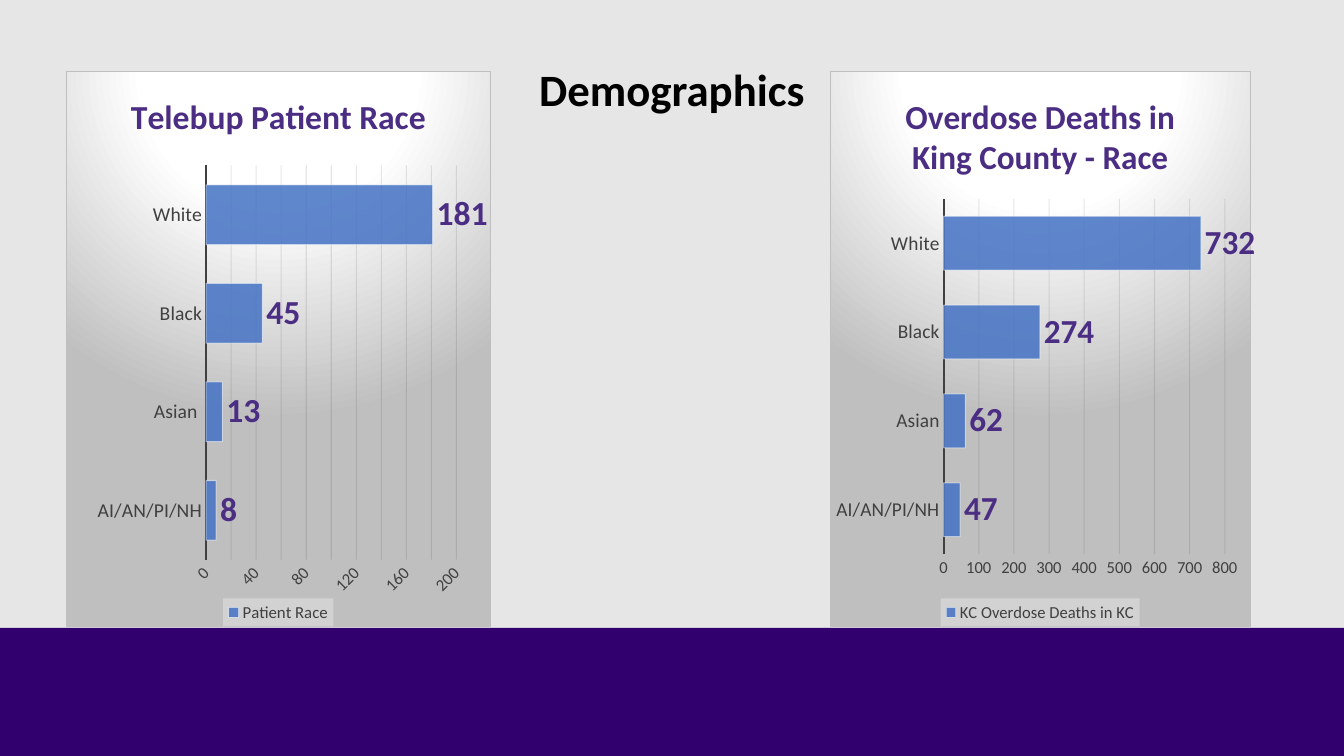
from dataclasses import dataclass

from lxml import etree
from pptx import Presentation
from pptx.chart.data import CategoryChartData
from pptx.dml.color import RGBColor
from pptx.enum.chart import XL_CHART_TYPE, XL_LABEL_POSITION, XL_LEGEND_POSITION, XL_TICK_MARK
from pptx.enum.shapes import MSO_SHAPE
from pptx.enum.text import MSO_ANCHOR, PP_ALIGN
from pptx.oxml import parse_xml
from pptx.oxml.ns import nsdecls, qn
from pptx.util import Inches, Pt

BAR_CLUSTERED = XL_CHART_TYPE.BAR_CLUSTERED
OUTSIDE_END = XL_LABEL_POSITION.OUTSIDE_END
LEGEND_BOTTOM = XL_LEGEND_POSITION.BOTTOM
NO_TICK = XL_TICK_MARK.NONE
RECTANGLE = MSO_SHAPE.RECTANGLE
MIDDLE = MSO_ANCHOR.MIDDLE
CENTER = PP_ALIGN.CENTER


@dataclass(frozen=True)
class Theme:
    font: str = "Calibri"
    background: str = "E7E6E6"
    band: str = "32006E"
    heading: str = "000000"
    accent: str = "4B2E83"
    bar: str = "4472C4"
    axis: str = "404040"
    grid: str = "0D0D0D"
    white: str = "FFFFFF"
    panel_edge: str = "BFBFBF"
    legend: str = "F2F2F2"
    heading_size: int = 32
    chart_size: int = 24
    category_size: int = 14
    small_size: int = 12


THEME = Theme()


def rgb(color):
    return RGBColor.from_string(color)


def style_font(font, size, color, bold=False):
    font.name = THEME.font
    font.size = Pt(size)
    font.bold = bold
    font.color.rgb = rgb(color)


def set_line(line, color, width):
    line.color.rgb = rgb(color)
    line.width = Pt(width)


def set_alpha(properties, percent):
    """Make the first colour found in the given element translucent."""
    color = next(properties.iter(qn("a:srgbClr")))
    etree.SubElement(color, qn("a:alpha")).set("val", str(percent * 1000))


def paint_panel(chart):
    """Give the chart area its spotlight gradient and thin border."""
    stops = ((0, THEME.white), (39, THEME.white), (100, THEME.panel_edge))
    stop_xml = "".join(
        f'<a:gs pos="{position * 1000}"><a:srgbClr val="{color}"/></a:gs>'
        for position, color in stops)
    panel = parse_xml(
        f'<c:spPr {nsdecls("c", "a")}><a:gradFill><a:gsLst>{stop_xml}</a:gsLst>'
        '<a:path path="circle">'
        '<a:fillToRect l="50000" t="-80000" r="50000" b="180000"/></a:path></a:gradFill>'
        f'<a:ln w="{Pt(0.75)}"><a:solidFill><a:srgbClr val="{THEME.panel_edge}"/>'
        '</a:solidFill></a:ln></c:spPr>')
    chart.element.find(qn("c:chart")).addnext(panel)


def place_plot(chart, x, y, w, h):
    """Fix the inner plot area, in fractions of the chart."""
    plot_area = chart.element.find(qn("c:chart")).find(qn("c:plotArea"))
    for automatic in plot_area.findall(qn("c:layout")):
        plot_area.remove(automatic)
    plot_area.insert(0, parse_xml(
        f'<c:layout {nsdecls("c")}><c:manualLayout><c:layoutTarget val="inner"/>'
        '<c:xMode val="edge"/><c:yMode val="edge"/>'
        f'<c:x val="{x}"/><c:y val="{y}"/><c:w val="{w}"/><c:h val="{h}"/>'
        '</c:manualLayout></c:layout>'))


def style_axes(chart):
    categories, values = chart.category_axis, chart.value_axis
    for axis, size in ((categories, THEME.category_size), (values, THEME.small_size)):
        axis.major_tick_mark = axis.minor_tick_mark = NO_TICK
        style_font(axis.tick_labels.font, size, THEME.axis)
    set_line(categories.format.line, THEME.axis, 1.5)
    values.format.line.fill.background()
    values.has_major_gridlines = True
    grid = values.major_gridlines.format.line
    set_line(grid, THEME.grid, 0.75)
    set_alpha(values.major_gridlines._xAx.find(qn("c:majorGridlines")), 10)


def style_bars(chart):
    plot = chart.plots[0]
    plot.gap_width = 65
    plot.vary_by_categories = False
    bars = plot.series[0]
    bars.format.fill.solid()
    bars.format.fill.fore_color.rgb = rgb(THEME.bar)
    properties = bars._element.find(qn("c:spPr"))
    set_alpha(properties, 85)
    set_line(bars.format.line, THEME.white, 0.75)
    set_alpha(properties.find(qn("a:ln")), 50)
    labels = bars.data_labels
    labels.show_value = True
    labels.position = OUTSIDE_END
    style_font(labels.font, THEME.chart_size, THEME.accent, bold=True)


def style_legend(chart):
    chart.has_legend = True
    legend = chart.legend
    legend.position = LEGEND_BOTTOM
    legend.include_in_layout = False
    style_font(legend.font, THEME.small_size, THEME.axis)
    backdrop = parse_xml(
        f'<c:spPr {nsdecls("c", "a")}><a:solidFill><a:srgbClr val="{THEME.legend}">'
        '<a:alpha val="39000"/></a:srgbClr></a:solidFill></c:spPr>')
    legend._element.find(qn("c:txPr")).addprevious(backdrop)


def add_race_chart(slide, box, title, series_name, counts, plot_box):
    data = CategoryChartData()
    data.categories = list(counts)
    data.add_series(series_name, list(counts.values()))
    chart = slide.shapes.add_chart(BAR_CLUSTERED, *map(Inches, box), data).chart
    style_font(chart.font, 10, THEME.heading)
    chart.has_title = True
    chart.chart_title.include_in_layout = False
    heading = chart.chart_title.text_frame
    heading.text = title
    style_font(heading.paragraphs[0].font, THEME.chart_size, THEME.accent, bold=True)
    paint_panel(chart)
    style_axes(chart)
    style_bars(chart)
    style_legend(chart)
    place_plot(chart, *plot_box)


def add_band(slide, box):
    band = slide.shapes.add_shape(RECTANGLE, *map(Inches, box))
    band.shadow.inherit = False
    band.fill.solid()
    band.fill.fore_color.rgb = rgb(THEME.band)
    band.line.fill.background()


def set_title(slide, box, text):
    title = slide.shapes.title
    title.left, title.top, title.width, title.height = map(Inches, box)
    title.text_frame.text = text
    title.text_frame.vertical_anchor = MIDDLE
    paragraph = title.text_frame.paragraphs[0]
    paragraph.alignment = CENTER
    style_font(paragraph.font, THEME.heading_size, THEME.heading, bold=True)


def build_demographics(slide, width, height):
    slide.background.fill.solid()
    slide.background.fill.fore_color.rgb = rgb(THEME.background)
    band_height = 1.27
    add_band(slide, (0, height - band_height, width, band_height))
    set_title(slide, (3.66, 0.56, 6.01, 0.64), "Demographics")
    top, chart_width, chart_height = 0.7, 4.22, 5.52
    add_race_chart(
        slide, (0.65, top, chart_width, chart_height),
        "Telebup Patient Race", "Patient Race",
        {"AI/AN/PI/NH": 8, "Asian ": 13, "Black": 45, "White": 181},
        (0.33, 0.17, 0.59, 0.71))
    add_race_chart(
        slide, (8.23, top, chart_width, chart_height),
        "Overdose Deaths in King County - Race", "KC Overdose Deaths in KC",
        {"AI/AN/PI/NH": 47, "Asian": 62, "Black": 274, "White": 732},
        (0.27, 0.23, 0.67, 0.64))


def main():
    width, height = 13.33, 7.5
    deck = Presentation()
    deck.slide_width, deck.slide_height = Inches(width), Inches(height)
    title_only = deck.slide_layouts[5]
    build_demographics(deck.slides.add_slide(title_only), width, height)
    deck.save("out.pptx")


if __name__ == "__main__":
    main()
